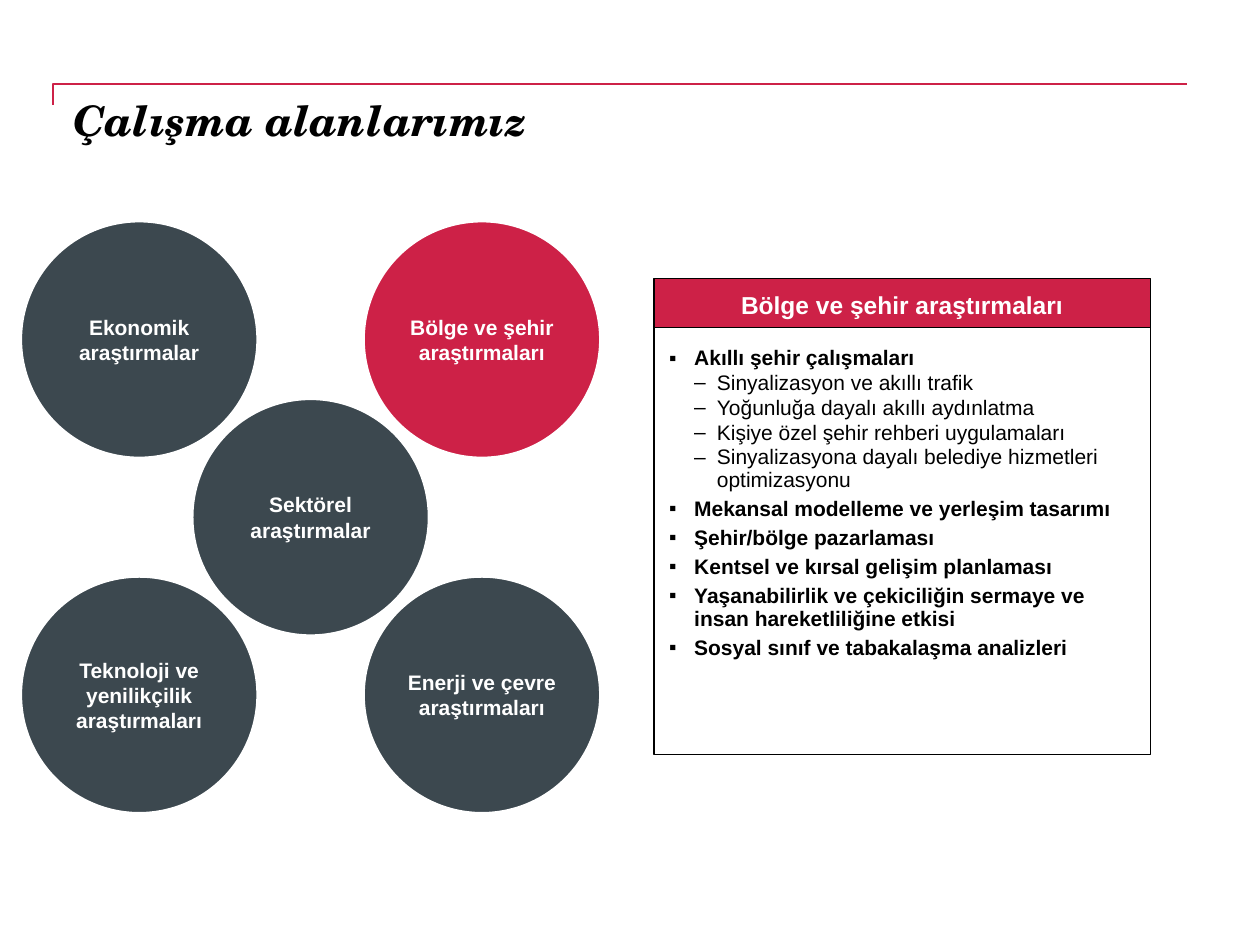
from dataclasses import dataclass

from lxml import etree
from pptx import Presentation
from pptx.dml.color import RGBColor
from pptx.enum.shapes import MSO_SHAPE
from pptx.enum.text import MSO_ANCHOR, PP_ALIGN
from pptx.oxml.ns import qn
from pptx.util import Inches, Pt

RECTANGLE, OVAL = MSO_SHAPE.RECTANGLE, MSO_SHAPE.OVAL
TOP, MIDDLE = MSO_ANCHOR.TOP, MSO_ANCHOR.MIDDLE
LEFT, CENTER = PP_ALIGN.LEFT, PP_ALIGN.CENTER
WIDTH, HEIGHT = Inches(10), Inches(7.5)
RED, SLATE, BLACK, WHITE = "CD2147", "3C484F", "000000", "FFFFFF"
CIRCLE_LEFT, CIRCLE_TOP = 1.6, 23.33
COLUMN_STEP, ROW_STEP = 13.6, 18.8
CIRCLE_WIDTH, CIRCLE_HEIGHT = 18.9, 25.2


@dataclass(frozen=True)
class Area:
    left: float
    top: float
    width: float
    height: float


@dataclass(frozen=True)
class Circle:
    text: str
    column: int
    row: int
    fill: str = SLATE


@dataclass(frozen=True)
class Level:
    mark: str
    depth: int
    margin: float
    hanging: float
    before: float
    bold: bool


@dataclass(frozen=True)
class Item:
    text: str
    level: Level


TOPIC = Level("▪", 0, 0.2, 0.2, 3.6, True)
DETAIL = Level("–", 1, 0.38, 0.18, 1.2, False)

CIRCLES = [
    Circle("Ekonomik araştırmalar", 0, 0),
    Circle("Teknoloji ve yenilikçilik araştırmaları", 0, 2),
    Circle("Bölge ve şehir araştırmaları", 2, 0, RED),
    Circle("Enerji ve çevre araştırmaları", 2, 2),
    Circle("Sektörel araştırmalar", 1, 1),
]
ITEMS = [
    Item("Akıllı şehir çalışmaları", TOPIC),
    Item("Sinyalizasyon ve akıllı trafik", DETAIL),
    Item("Yoğunluğa dayalı akıllı aydınlatma", DETAIL),
    Item("Kişiye özel şehir rehberi uygulamaları", DETAIL),
    Item("Sinyalizasyona dayalı belediye hizmetleri optimizasyonu", DETAIL),
    Item("Mekansal modelleme ve yerleşim tasarımı", TOPIC),
    Item("Şehir/bölge pazarlaması", TOPIC),
    Item("Kentsel ve kırsal gelişim planlaması", TOPIC),
    Item("Yaşanabilirlik ve çekiciliğin sermaye ve insan hareketliliğine etkisi", TOPIC),
    Item("Sosyal sınıf ve tabakalaşma analizleri", TOPIC),
]


def color(value: str) -> RGBColor:
    return RGBColor.from_string(value)


def across(percent: float) -> int:
    return round(WIDTH * percent / 100)


def down(percent: float) -> int:
    return round(HEIGHT * percent / 100)


def bounds(area: Area) -> tuple[int, int, int, int]:
    return across(area.left), down(area.top), across(area.width), down(area.height)


def set_frame(frame, anchor=TOP, insets=(0, 0, 0, 0)) -> None:
    frame.word_wrap = True
    frame.vertical_anchor = anchor
    frame.margin_left, frame.margin_top, frame.margin_right, frame.margin_bottom = map(Inches, insets)


def write(para, text: str, *, size=12, font="Arial", fill=BLACK, bold=True, italic=False, align=LEFT) -> None:
    para.alignment = align
    span = para.add_run()
    span.text = text
    span.font.size = Pt(size)
    span.font.name = font
    span.font.bold = bold
    span.font.italic = italic
    span.font.color.rgb = color(fill)


def add_box(page, kind, area: Area, fill: str, line: str, weight: float):
    box = page.shapes.add_shape(kind, *bounds(area))
    box.shadow.inherit = False
    box.fill.solid()
    box.fill.fore_color.rgb = color(fill)
    box.line.color.rgb = color(line)
    box.line.width = Pt(weight)
    return box


def add_label(box, text: str, size: float) -> None:
    set_frame(box.text_frame, MIDDLE)
    write(box.text_frame.paragraphs[0], text, size=size, fill=WHITE, align=CENTER)


def add_circle(page, circle: Circle) -> None:
    area = Area(
        CIRCLE_LEFT + circle.column * COLUMN_STEP,
        CIRCLE_TOP + circle.row * ROW_STEP,
        CIRCLE_WIDTH,
        CIRCLE_HEIGHT,
    )
    add_label(add_box(page, OVAL, area, circle.fill, WHITE, 2.25), circle.text, 12)


def set_bullet(para, level: Level) -> None:
    para.level = level.depth
    properties = para._p.get_or_add_pPr()
    properties.set("marL", str(Inches(level.margin)))
    properties.set("indent", str(-Inches(level.hanging)))
    tint = etree.SubElement(properties, qn("a:buClr"))
    etree.SubElement(tint, qn("a:srgbClr"), val=BLACK)
    etree.SubElement(properties, qn("a:buFont"), typeface="Arial")
    etree.SubElement(properties, qn("a:buChar"), char=level.mark)


def add_list(frame, items: list[Item]) -> None:
    for index, item in enumerate(items):
        para = frame.add_paragraph() if index else frame.paragraphs[0]
        set_bullet(para, item.level)
        para.line_spacing = 0.9
        para.space_before = Pt(item.level.before if index else 0)
        write(para, item.text, bold=item.level.bold)


def add_title(page, text: str) -> None:
    builder = page.shapes.build_freeform(across(4.2), down(11.07))
    builder.add_line_segments([(across(4.2), down(8.93)), (across(94.2), down(8.93))], close=False)
    rule = builder.convert_to_shape()
    rule.shadow.inherit = False
    rule.fill.background()
    rule.line.color.rgb = color(RED)
    rule.line.width = Pt(1)
    box = page.shapes.add_textbox(*bounds(Area(5.8, 10, 88.3, 13.33)))
    set_frame(box.text_frame)
    write(box.text_frame.paragraphs[0], text, size=24, font="TeX Gyre Schola", italic=True)


def add_panel(page, heading: str, items: list[Item]) -> None:
    header = add_box(page, RECTANGLE, Area(51.9, 29.47, 39.4, 5.47), RED, BLACK, 0.75)
    add_label(header, heading, 14)
    body = add_box(page, RECTANGLE, Area(51.9, 34.67, 39.4, 45.2), WHITE, BLACK, 0.75)
    set_frame(body.text_frame, insets=(0.12, 0.16, 0.08, 0.04))
    add_list(body.text_frame, items)


def main() -> None:
    deck = Presentation()
    deck.slide_width, deck.slide_height = WIDTH, HEIGHT
    page = deck.slides.add_slide(deck.slide_layouts[6])
    add_title(page, "Çalışma alanlarımız")
    add_panel(page, "Bölge ve şehir araştırmaları", ITEMS)
    for circle in CIRCLES:
        add_circle(page, circle)
    deck.save("out.pptx")


if __name__ == "__main__":
    main()
